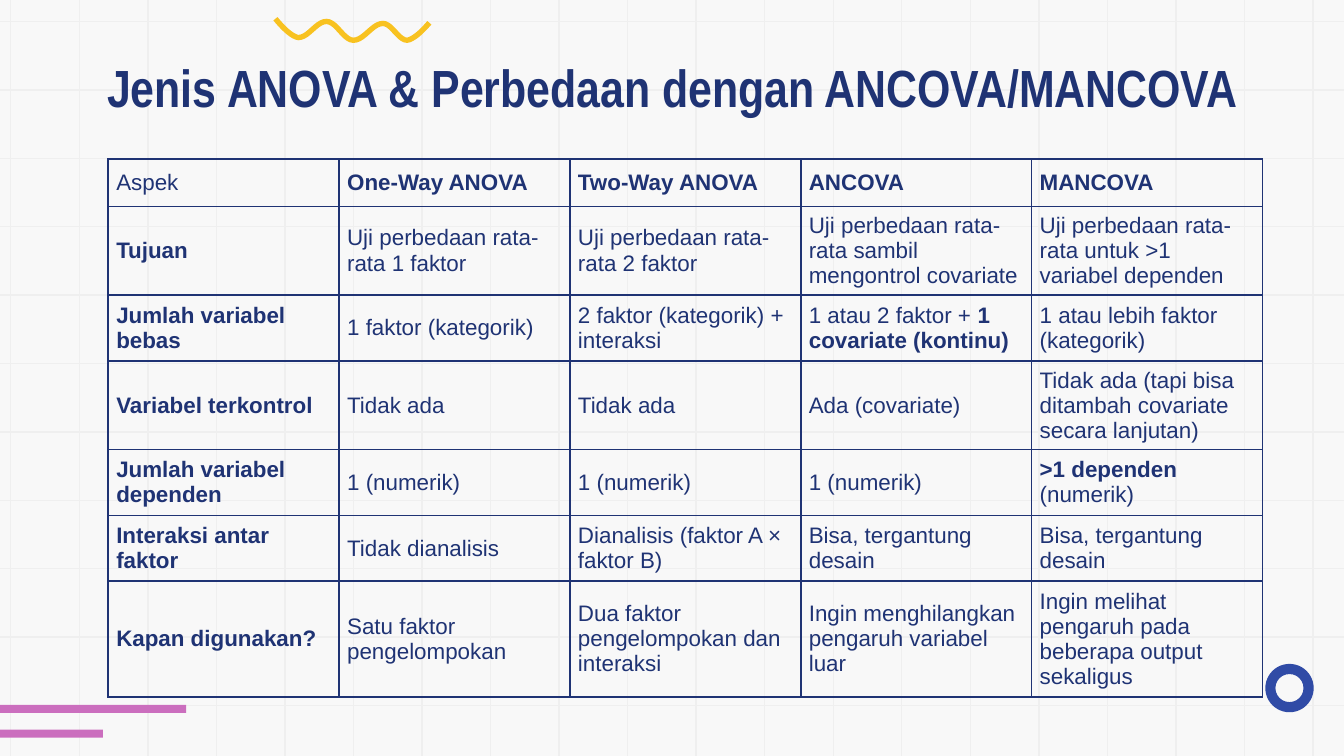
from math import cos, hypot, pi

from lxml.etree import SubElement
from pptx import Presentation
from pptx.dml.color import RGBColor
from pptx.enum.shapes import MSO_CONNECTOR, MSO_SHAPE
from pptx.enum.text import MSO_ANCHOR, PP_ALIGN
from pptx.oxml.ns import qn
from pptx.util import Inches, Pt

LINE = MSO_CONNECTOR.STRAIGHT
RECT = MSO_SHAPE.RECTANGLE
RING = MSO_SHAPE.DONUT
MIDDLE = MSO_ANCHOR.MIDDLE
CENTER = PP_ALIGN.CENTER

PAPER = RGBColor(0xF8, 0xF8, 0xF8)
GRID = RGBColor(0xEF, 0xEF, 0xEF)
NAVY = RGBColor(0x1F, 0x33, 0x74)
BLUE = RGBColor(0x30, 0x4B, 0xA6)
PINK = RGBColor(0xCB, 0x6E, 0xBE)
GOLD = RGBColor(0xF8, 0xC2, 0x20)

UNIT = Inches(0.01)
COLS, ROWS = 1000, 562.5

TITLE = "Jenis ANOVA & Perbedaan dengan ANCOVA/MANCOVA"
HEIGHTS = [35, 64, 49, 64, 49, 49, 64]
TABLE = [
    ["Aspek", "*One-Way ANOVA", "*Two-Way ANOVA", "*ANCOVA", "*MANCOVA"],
    ["*Tujuan", "Uji perbedaan rata-rata 1 faktor",
     "Uji perbedaan rata-rata 2 faktor",
     "Uji perbedaan rata-rata sambil mengontrol covariate",
     "Uji perbedaan rata-rata untuk >1 variabel dependen"],
    ["*Jumlah variabel bebas", "1 faktor (kategorik)",
     "2 faktor (kategorik) + interaksi",
     "1 atau 2 faktor + *1 covariate (kontinu)",
     "1 atau lebih faktor (kategorik)"],
    ["*Variabel terkontrol", "Tidak ada", "Tidak ada", "Ada (covariate)",
     "Tidak ada (tapi bisa ditambah covariate secara lanjutan)"],
    ["*Jumlah variabel dependen", "1 (numerik)", "1 (numerik)",
     "1 (numerik)", "*>1 dependen* (numerik)"],
    ["*Interaksi antar faktor", "Tidak dianalisis",
     "Dianalisis (faktor A × faktor B)",
     "Bisa, tergantung desain", "Bisa, tergantung desain"],
    ["*Kapan digunakan?", "Satu faktor pengelompokan",
     "Dua faktor pengelompokan dan interaksi",
     "Ingin menghilangkan pengaruh variabel luar",
     "Ingin melihat pengaruh pada beberapa output sekaligus"],
]
NODES = [(205, 14), (222, 28), (243, 16), (263, 30),
         (285, 17.5), (303, 30), (319.5, 17)]


def cells(*nums):
    return [round(num * UNIT) for num in nums]


def spread(first, last, count):
    return [first + (last - first) * i / (count - 1) for i in range(count)]


def add_rule(slide, *ends):
    rule = slide.shapes.add_connector(LINE, *cells(*ends))
    rule.line.color.rgb = GRID
    rule.line.width = Pt(0.75)
    SubElement(rule._element.spPr, qn("a:effectLst"))


def paint(shape, color):
    shape.shadow.inherit = False
    shape.fill.solid()
    shape.fill.fore_color.rgb = color
    shape.line.fill.background()


def add_form(slide, kind, box, color):
    shape = slide.shapes.add_shape(kind, *cells(*box))
    paint(shape, color)
    return shape


def trace(steps):
    spine = [NODES[0]]
    final = len(NODES) - 2
    for i, ((x1, y1), (x2, y2)) in enumerate(zip(NODES, NODES[1:])):
        for step in range(1, steps + 1):
            t = step / steps
            if i == 0:
                ease = 1 - (1 - t) ** 1.5
            elif i == final:
                ease = t ** 1.5
            else:
                ease = (1 - cos(pi * t)) / 2
            spine.append((x1 + (x2 - x1) * t, y1 + (y2 - y1) * ease))
    return spine


def add_wave(slide, half):
    spine = trace(10)
    upper, lower = [], []
    for i, (x, y) in enumerate(spine):
        x1, y1 = spine[max(i - 1, 0)]
        x2, y2 = spine[min(i + 1, len(spine) - 1)]
        size = hypot(x2 - x1, y2 - y1)
        dx, dy = half * (y2 - y1) / size, half * (x2 - x1) / size
        upper.append(cells(x + dx, y - dy))
        lower.append(cells(x - dx, y + dy))
    edge = upper + lower[::-1]
    pen = slide.shapes.build_freeform(*edge[0])
    pen.add_line_segments(edge[1:], close=True)
    paint(pen.convert_to_shape(), GOLD)


def add_run(para, text, face, size, bold):
    run = para.add_run()
    run.text = text
    run.font.name = face
    run.font.size = Pt(size)
    run.font.bold = bold
    run.font.color.rgb = NAVY


def add_title(slide):
    frame = slide.shapes.add_textbox(*cells(32, 31, 936, 63)).text_frame
    frame.word_wrap = True
    frame.margin_left = frame.margin_right = Inches(0.1)
    frame.margin_top = frame.margin_bottom = Inches(0.1)
    para = frame.paragraphs[0]
    para.alignment = CENTER
    add_run(para, TITLE, "Arial Narrow", 28, True)


def add_edges(cell):
    props = cell._tc.get_or_add_tcPr()
    for i, side in enumerate(("lnL", "lnR", "lnT", "lnB")):
        edge = props.makeelement(qn("a:" + side), {"w": str(Pt(1))})
        fill = SubElement(edge, qn("a:solidFill"))
        SubElement(fill, qn("a:srgbClr"), val=str(NAVY))
        props.insert(i, edge)


def fill_cell(cell, text):
    cell.fill.background()
    cell.vertical_anchor = MIDDLE
    cell.margin_left = cell.margin_right = Inches(0.06)
    cell.margin_top = cell.margin_bottom = Inches(0.03)
    para = cell.text_frame.paragraphs[0]
    for i, part in enumerate(text.split("*")):
        if part:
            add_run(para, part, "Arial", 12, i % 2 == 1)
    add_edges(cell)


def add_grid(slide):
    box = cells(80.5, 118.5, 859, 328)
    frame = slide.shapes.add_table(len(TABLE), len(TABLE[0]), *box)
    table = frame.table
    table.first_row = table.horz_banding = False
    for row, high, texts in zip(table.rows, HEIGHTS, TABLE):
        row.height = cells(high)[0]
        for cell, text in zip(row.cells, texts):
            fill_cell(cell, text)
    frame.height = box[3]


def main():
    deck = Presentation()
    deck.slide_width, deck.slide_height = cells(COLS, ROWS)
    slide = deck.slides.add_slide(deck.slide_layouts[6])
    slide.background.fill.solid()
    slide.background.fill.fore_color.rgb = PAPER
    for y in spread(16, 525, 11):
        add_rule(slide, COLS, y, 0, y)
    for x in spread(8, 977, 20):
        add_rule(slide, x, -18, x, 580)
    for top, wide in ((524.5, 138.5), (543, 76.5)):
        add_form(slide, RECT, (0, top, wide, 6), PINK)
    ring = add_form(slide, RING, (941.5, 494, 36, 36), BLUE)
    ring.adjustments[0] = 0.21
    add_wave(slide, 2)
    add_title(slide)
    add_grid(slide)
    deck.save("out.pptx")


if __name__ == "__main__":
    main()
